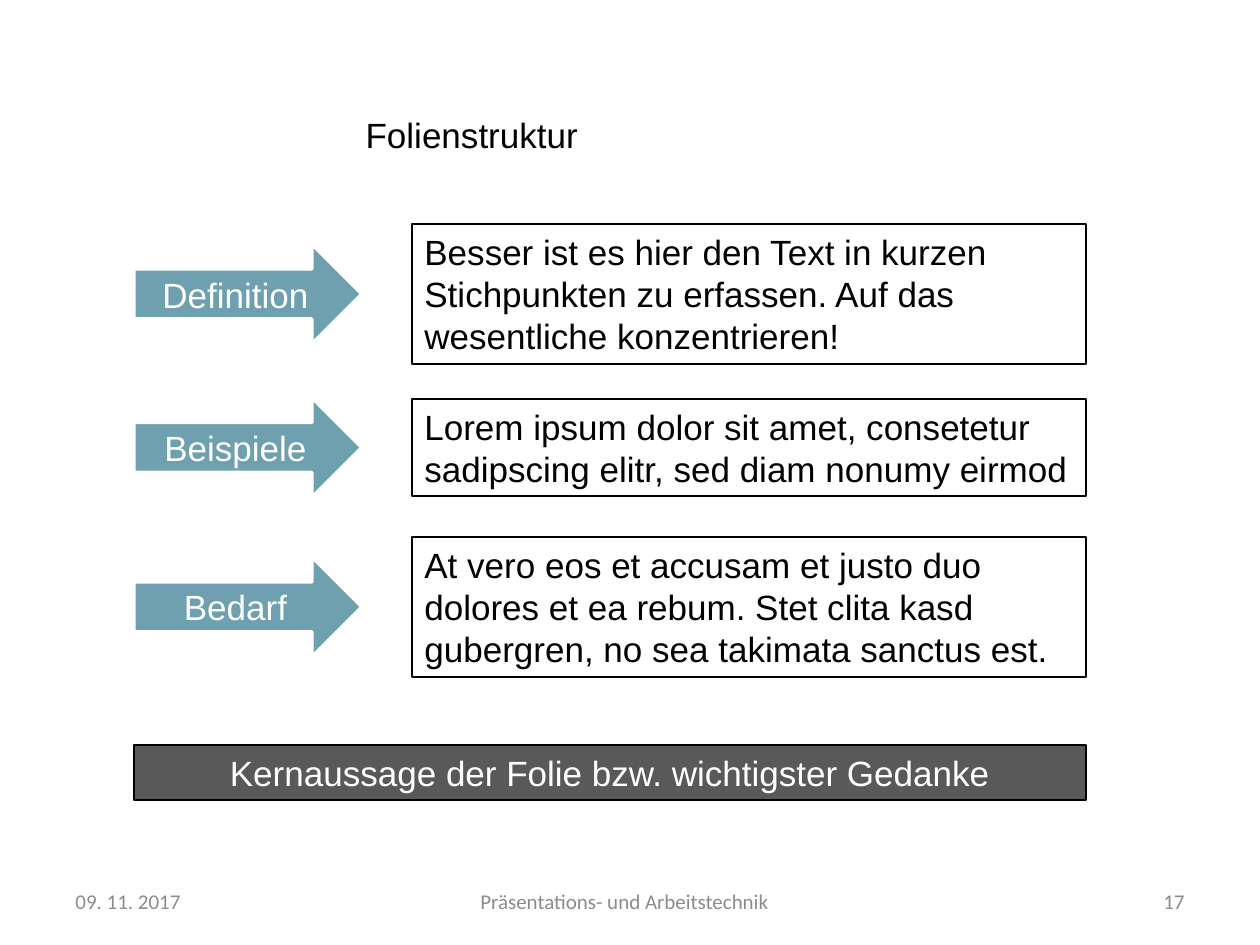
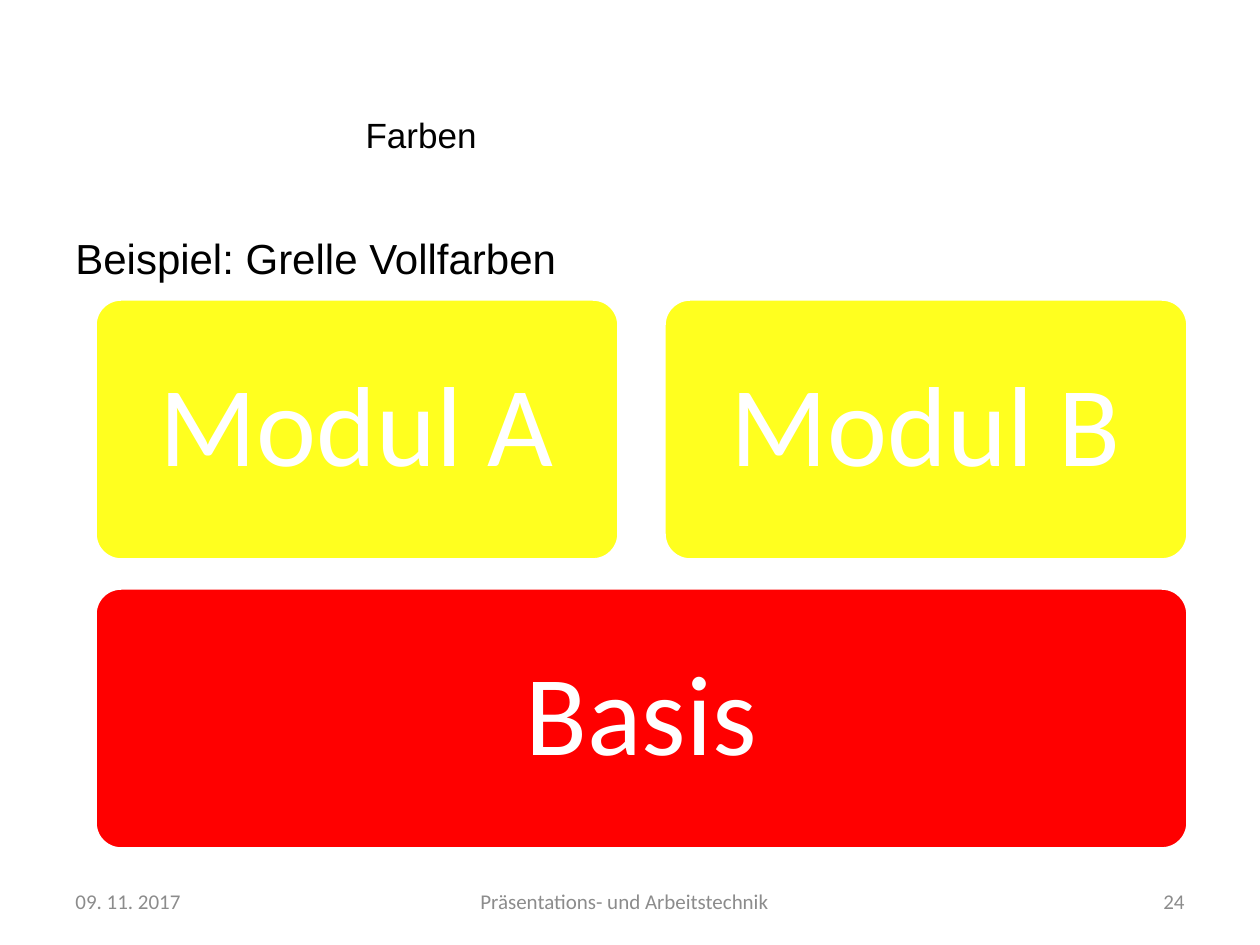
from lxml import etree
from pptx import Presentation
from pptx import util as u
from pptx.dml.color import RGBColor
from pptx.enum import shapes, text
from pptx.oxml.ns import qn

PX = 914400 / 126
COLORS = {"black": "000000", "white": "FFFFFF", "footer": "8C8C8C", "arrow": "6EA0B0",
          "message": "595959", "yellow": "FFFF1F", "red": "FF0000"}
KIND = shapes.MSO_SHAPE
ALIGN = text.PP_ALIGN
ANCHOR = text.MSO_ANCHOR
FIT = text.MSO_AUTO_SIZE

# Shared by both slides: left, top, width, height in px
TITLE_AREA = (353, 16, 605, 146)
FOOTER_TOP, FOOTER_HEIGHT = 876, 50
DATE = "09. 11. 2017"
EVENT = "Präsentations- und Arbeitstechnik"

# Slide "Folienstruktur": arrow label, explanation, top, height
STRUCTURE = [
    ("Definition", "Besser ist es hier den Text in kurzen Stichpunkten zu erfassen. "
     "Auf das wesentliche konzentrieren!", 224, 140),
    ("Beispiele", "Lorem ipsum dolor sit amet, consetetur sadipscing elitr, "
     "sed diam nonumy eirmod", 399, 97),
    ("Bedarf", "At vero eos et accusam et justo duo dolores et ea rebum. "
     "Stet clita kasd gubergren, no sea takimata sanctus est.", 537, 140),
]
MESSAGE = "Kernaussage der Folie bzw. wichtigster Gedanke"
ARROW_LEFT, ARROW_WIDTH, ARROW_HEIGHT = 134, 228, 100
BOX_LEFT, BOX_WIDTH = 412, 674

# Slide "Farben": rows of tiles that share the full width
BULLET = "Beispiel: Grelle Vollfarben"
TILE_ROWS = [(["Modul A", "Modul B"], "yellow"), (["Basis"], "red")]
TILES_LEFT, TILES_TOP, TILES_WIDTH, TILE_HEIGHT = 95, 299, 1093, 261
COLUMN_GAP, ROW_GAP = 45, 28


def px(length):
    return round(length * PX)


def rgb(name):
    return RGBColor.from_string(COLORS[name])


def write(shape, words, size, color, font="Arial", align=ALIGN.LEFT, frame_format=None):
    frame = shape.text_frame
    frame.text = words
    settings = {"word_wrap": True, "auto_size": FIT.NONE, **(frame_format or {})}
    for name, value in settings.items():
        setattr(frame, name, value)
    paragraph = frame.paragraphs[0]
    paragraph.alignment = align
    for name, value in {"name": font, "size": u.Pt(size)}.items():
        setattr(paragraph.font, name, value)
    paragraph.font.color.rgb = rgb(color)
    return paragraph


def add_box(slide, kind, area, fill, line, line_width):
    shape = slide.shapes.add_shape(kind, *map(px, area))
    shape.shadow.inherit = False
    if fill:
        shape.fill.solid()
        shape.fill.fore_color.rgb = rgb(fill)
    else:
        shape.fill.background()
    shape.line.color.rgb = rgb(line)
    shape.line.width = u.Pt(line_width)
    return shape


def add_slide(presentation, title, number):
    """Add a slide with its title and the three footer texts."""
    slide = presentation.slides.add_slide(presentation.slide_layouts[5])
    heading = slide.shapes.title
    for name, value in zip(("left", "top", "width", "height"), TITLE_AREA):
        setattr(heading, name, px(value))
    write(heading, title, 20, "black", frame_format={"vertical_anchor": ANCHOR.BOTTOM})
    for words, left, width, align in [(DATE, 63, 294, ALIGN.LEFT),
                                      (EVENT, 312, 625, ALIGN.CENTER),
                                      (str(number), 903, 294, ALIGN.RIGHT)]:
        area = (left, FOOTER_TOP, width, FOOTER_HEIGHT)
        footer = slide.shapes.add_textbox(*map(px, area))
        write(footer, words, 12, "footer", "Calibri", align,
              {"vertical_anchor": ANCHOR.MIDDLE})
    return slide


def build_structure(presentation):
    slide = add_slide(presentation, "Folienstruktur", 17)
    boxed = {"vertical_anchor": ANCHOR.TOP, "auto_size": FIT.SHAPE_TO_FIT_TEXT}
    for label, explanation, top, height in STRUCTURE:
        arrow_top = top + (height - ARROW_HEIGHT) / 2
        arrow = add_box(slide, KIND.RIGHT_ARROW,
                        (ARROW_LEFT, arrow_top, ARROW_WIDTH, ARROW_HEIGHT),
                        "arrow", "white", 2)
        write(arrow, label, 20, "white", align=ALIGN.CENTER,
              frame_format={"vertical_anchor": ANCHOR.MIDDLE})
        box = add_box(slide, KIND.RECTANGLE, (BOX_LEFT, top, BOX_WIDTH, height),
                      None, "black", 0.75)
        write(box, explanation, 20, "black", frame_format=boxed)
    bar_width = BOX_LEFT + BOX_WIDTH - ARROW_LEFT
    bar = add_box(slide, KIND.RECTANGLE, (ARROW_LEFT, 745, bar_width, 55),
                  "message", "black", 0.75)
    write(bar, MESSAGE, 20, "white", align=ALIGN.CENTER, frame_format=boxed)


def add_bullet(paragraph, indent):
    properties = paragraph._p.get_or_add_pPr()
    properties.set("marL", str(px(indent)))
    properties.set("indent", str(-px(indent)))
    etree.SubElement(properties, qn("a:buFont"), typeface="Arial")
    etree.SubElement(properties, qn("a:buChar"), char="•")


def build_colors(presentation):
    slide = add_slide(presentation, "Farben", 24)
    body = slide.shapes.add_textbox(*map(px, (63, 220, 1134, 624)))
    add_bullet(body.text_frame.paragraphs[0], 48)
    write(body, BULLET, 24, "black", frame_format={"margin_top": px(12)})

    margins = {f"margin_{side}": px(34) for side in ("left", "top", "right", "bottom")}
    for row, (labels, color) in enumerate(TILE_ROWS):
        width = (TILES_WIDTH - COLUMN_GAP * (len(labels) - 1)) / len(labels)
        top = TILES_TOP + row * (TILE_HEIGHT + ROW_GAP)
        for column, label in enumerate(labels):
            left = TILES_LEFT + column * (width + COLUMN_GAP)
            tile = add_box(slide, KIND.ROUNDED_RECTANGLE,
                           (left, top, width, TILE_HEIGHT), color, "white", 2)
            tile.adjustments[0] = 0.1
            paragraph = write(tile, label, 65, "white", "Calibri", ALIGN.CENTER,
                              {"vertical_anchor": ANCHOR.MIDDLE, **margins})
            paragraph.line_spacing = 0.9
            paragraph.space_after = u.Pt(23)


def main():
    presentation = Presentation()
    presentation.slide_width = px(1260)
    presentation.slide_height = px(945)
    build_structure(presentation)
    build_colors(presentation)
    presentation.save("out.pptx")


if __name__ == "__main__":
    main()
